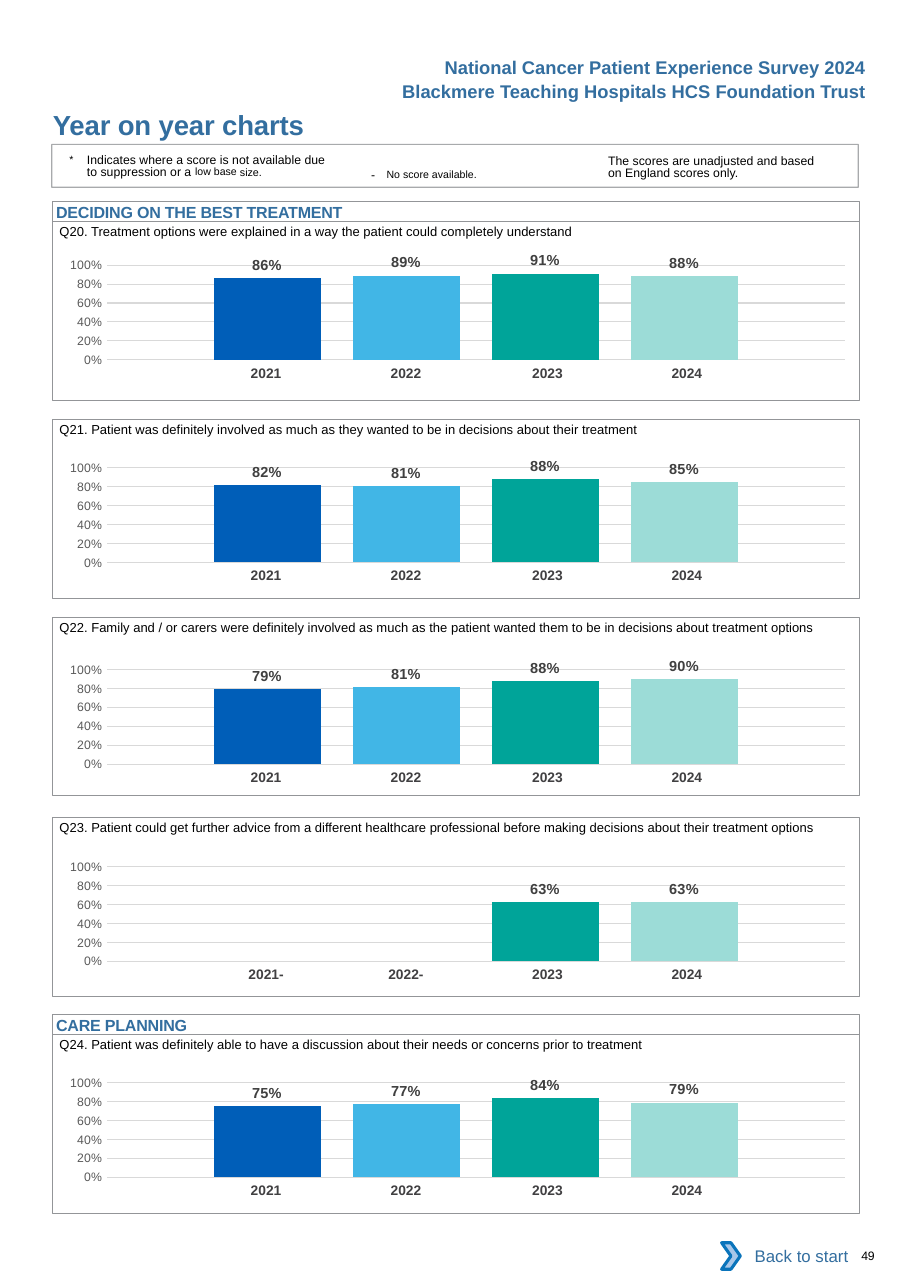
from pptx import Presentation
from pptx.chart.data import CategoryChartData as ChartData
from pptx.dml.color import RGBColor as RGB
from pptx.enum.chart import XL_CHART_TYPE as CHART, XL_LABEL_POSITION as SPOT, XL_TICK_MARK as TICK
from pptx.enum.shapes import MSO_SHAPE as SHAPE
from pptx.enum.text import MSO_ANCHOR as ANCHOR, PP_ALIGN as ALIGN
from pptx.oxml import parse_xml
from pptx.oxml.ns import nsdecls, qn
from pptx.util import Inches, Pt

HUES = {
    "ink": "000000", "head": "336E9F", "rule": "939598", "year": "414042",
    "label": "404040", "axis": "595959", "grid": "D9D9D9", "white": "FFFFFF",
    "arrow": "A8C7E9", "edge": "0A74BB",
}
BARS = {"Series 1": "005EB8", "Series 2": "41B6E6", "Series 3": "00A499", "Series 4": "9CDCD7"}
YEARS = ["2021", "2022", "2023", "2024"]
PLAIN = "{2D5ABB26-0587-4C30-8999-92F81FD0307C}"
LEFT, WIDE, TALL = 0.48, 7.32, 1.62

PANELS = [
    (2.01, 0.21, "Q20. Treatment options were explained in a way the patient could completely understand",
     [0.86, 0.89, 0.91, 0.88], YEARS),
    (3.81, 0.25, "Q21. Patient was definitely involved as much as they wanted to be in decisions about their treatment",
     [0.82, 0.81, 0.88, 0.85], YEARS),
    (5.6, 0.29, "Q22. Family and / or carers were definitely involved as much as the patient wanted them to be in "
     "decisions about treatment options", [0.79, 0.81, 0.88, 0.9], YEARS),
    (7.42, 0.26, "Q23. Patient could get further advice from a different healthcare professional before making "
     "decisions about their treatment options", [None, None, 0.63, 0.63], ["2021-", "2022-", "2023", "2024"]),
    (9.39, 0.25, "Q24. Patient was definitely able to have a discussion about their needs or concerns prior to treatment",
     [0.75, 0.77, 0.84, 0.79], YEARS),
]


def tint(name):
    return RGB.from_string(HUES.get(name, name))


def put(thing, **vals):
    for key, val in vals.items():
        setattr(thing, key, val)


def ink(font, size, hue="ink", bold=False):
    put(font, name="Arial", size=Pt(size), bold=bold)
    font.color.rgb = tint(hue)


def write(frame, runs, size, hue="ink", bold=False, pads=(0, 0, 0, 0), **form):
    sides = ("margin_left", "margin_top", "margin_right", "margin_bottom")
    put(frame, word_wrap=True, **{side: Inches(pad) for side, pad in zip(sides, pads)})
    para = frame.paragraphs[0]
    put(para, **form)
    for words, marks in runs:
        run = para.add_run()
        run.text = words
        ink(run.font, marks.get("size", size), hue, bold)
        for key in ("spc", "baseline"):
            if key in marks:
                run.font.fill
                run.font._element.set(key, str(marks[key]))
    return para


def text(slide, box, runs, size, **form):
    frame = slide.shapes.add_textbox(*map(Inches, box)).text_frame
    return write(frame, runs, size, **form)


def block(slide, box, kind=SHAPE.RECTANGLE, fill=None, line=None, width=0.5):
    shape = slide.shapes.add_shape(kind, *map(Inches, box))
    shape.shadow.inherit = False
    if fill:
        shape.fill.solid()
        shape.fill.fore_color.rgb = tint(fill)
    else:
        shape.fill.background()
    if line:
        shape.line.color.rgb = tint(line)
        shape.line.width = Pt(width)
    else:
        shape.line.fill.background()
    return shape


def section(slide, box, title):
    bar = block(slide, box, line="rule")
    bar.text_frame.vertical_anchor = ANCHOR.TOP
    write(bar.text_frame, [(title, {"spc": -10})], 10.5, "head", True,
          pads=(0.03, 0.01, 0, 0), alignment=ALIGN.LEFT)


def bars(slide, box, scores):
    data = ChartData(number_format="0%")
    data.categories = ["1"]
    for name, score in zip(BARS, scores):
        data.add_series(name, [score])
    chart = slide.shapes.add_chart(CHART.COLUMN_CLUSTERED, *map(Inches, box), data).chart
    put(chart, has_legend=False, has_title=False)
    put(chart.font, name="Calibri", size=Pt(10))
    chart.font.color.rgb = tint("ink")
    chart.category_axis.visible = False
    axis = chart.value_axis
    put(axis, minimum_scale=0, maximum_scale=1, major_unit=0.2,
        major_tick_mark=TICK.NONE, minor_tick_mark=TICK.NONE)
    put(axis.tick_labels, number_format="0%", number_format_is_linked=False)
    ink(axis.tick_labels.font, 8, "axis")
    axis.format.line.fill.background()
    grid = axis.major_gridlines.format.line
    grid.color.rgb = tint("grid")
    grid.width = Pt(0.75)
    plot = chart.plots[0]
    put(plot, gap_width=200, overlap=-30, vary_by_categories=False)
    for series in plot.series:
        series.format.fill.solid()
        series.format.fill.fore_color.rgb = tint(BARS[series.name])
        tags = series.data_labels
        put(tags, show_value=True, position=SPOT.OUTSIDE_END,
            number_format="0%", number_format_is_linked=False)
        ink(tags.font, 9.5, "label", True)
    area = chart.element.find(".//" + qn("c:plotArea"))
    for old in area.findall(qn("c:layout")):
        area.remove(old)
    sizes = "".join(f'<c:{key} val="{val}"/>' for key, val in
                    (("x", 0.079), ("y", 0.145), ("w", 0.915), ("h", 0.666)))
    area.insert(0, parse_xml(
        f'<c:layout {nsdecls("c")}><c:manualLayout><c:layoutTarget val="inner"/>'
        f'<c:xMode val="edge"/><c:yMode val="edge"/>{sizes}</c:manualLayout></c:layout>'))


def years(slide, box, names):
    table = slide.shapes.add_table(1, len(names), *map(Inches, box)).table
    put(table, first_row=False, horz_banding=False)
    table._tbl.tblPr.find(qn("a:tableStyleId")).text = PLAIN
    for spot, (name, width, pad) in enumerate(zip(names, (1.27, 1.27, 1.34, 1.27), (0, 0, 0.04, 0.12))):
        table.columns[spot].width = Inches(width)
        cell = table.cell(0, spot)
        cell.fill.background()
        write(cell.text_frame, [(name, {})], 9, "year", True, alignment=ALIGN.CENTER)
        put(cell, margin_left=Inches(0.1), margin_right=Inches(pad),
            margin_top=Inches(0.05), margin_bottom=Inches(0.05))


def panel(slide, box, drop, ask, scores, names):
    left, top, wide, tall = box
    years(slide, (left + 1.25, top + drop + 1.05, 5.15, 0.27), names)
    bars(slide, (left - 0.09, top + drop, wide, 1.29), scores)
    block(slide, box, line="rule")
    text(slide, (left + 0.06, top - 0.07, wide - 0.06, 0.24), [(ask, {})], 8.5, pads=(0, 0.09, 0, 0))


def header(slide, box):
    left, top, wide, tall = box
    for row, words in enumerate(["National Cancer Patient Experience Survey 2024",
                                 "Blackmere Teaching Hospitals HCS Foundation Trust"]):
        text(slide, (left, top + 0.22 * row, wide, tall), [(words, {})], 12, hue="head", bold=True,
             pads=(0.1, 0.05, 0.1, 0.05), alignment=ALIGN.RIGHT)
    text(slide, (0.47, top + 0.5, 4.5, 0.3), [("Year on year charts", {"spc": -10})], 18,
         hue="head", bold=True, pads=(0.01, 0.02, 0, 0))


def notes(slide, box):
    left, top, wide, tall = box
    para = text(slide, (left + 0.16, top + 0.07, 2.4, 0.27), [
        ("*\t", {"size": 12, "baseline": 3000}),
        ("Indicates where a score is not available due to suppression or a ", {}),
        ("low base", {"size": 12, "baseline": 7000}),
        (" size.", {"size": 7}),
    ], 8, pads=(0, 0.03, 0, 0), line_spacing=Pt(8.1))
    for key, gap in (("marL", 0.16), ("indent", -0.16)):
        para._p.get_or_add_pPr().set(key, str(Inches(gap)))
    text(slide, (left + 2.8, top + 0.1, 1.83, 0.24), [
        ("- ", {"spc": 260}), ("No score available.", {"size": 12, "baseline": 3000}),
    ], 8, pads=(0.1, 0.05, 0.1, 0.05))
    text(slide, (left + 5.05, top + 0.07, 2.01, 0.27),
         [("The scores are unadjusted and based on England scores only.", {})], 8,
         pads=(0, 0.03, 0, 0), line_spacing=Pt(8.1))
    frame = block(slide, box, line="rule", width=0.75)
    hue = frame.line._ln.find(".//" + qn("a:srgbClr"))
    hue.append(parse_xml(f'<a:alpha {nsdecls("a")} val="80000"/>'))


def footer(slide, box):
    left, top, wide, tall = box
    link = block(slide, (left + 0.07, top, wide - 0.07, tall), fill="white")
    link.text_frame.vertical_anchor = ANCHOR.MIDDLE
    write(link.text_frame, [("Back to start", {})], 11, "head",
          pads=(0.1, 0.05, 0.1, 0.05), alignment=ALIGN.RIGHT)
    block(slide, (left, top + 0.09, 0.17, 0.24), SHAPE.CHEVRON, "arrow", "edge", 2)
    text(slide, (left + 1.17, top + 0.14, 0.51, 0.13), [("49", {"spc": -20})], 8, pads=(0.1, 0, 0, 0))


def main():
    deck = Presentation()
    put(deck, slide_width=Inches(8.26), slide_height=Inches(11.69))
    slide = deck.slides.add_slide(deck.slide_layouts[6])
    header(slide, (2.96, 0.46, 5, 0.3))
    notes(slide, (0.47, 1.31, WIDE, 0.39))
    for top, *rest in PANELS:
        panel(slide, (LEFT, top, WIDE, TALL), *rest)
    section(slide, (LEFT, 1.83, WIDE, 0.18), "DECIDING ON THE BEST TREATMENT")
    section(slide, (LEFT, 9.21, WIDE, 0.18), "CARE PLANNING")
    footer(slide, (6.55, 11.19, 1.25, 0.42))
    deck.save("out.pptx")


if __name__ == "__main__":
    main()
